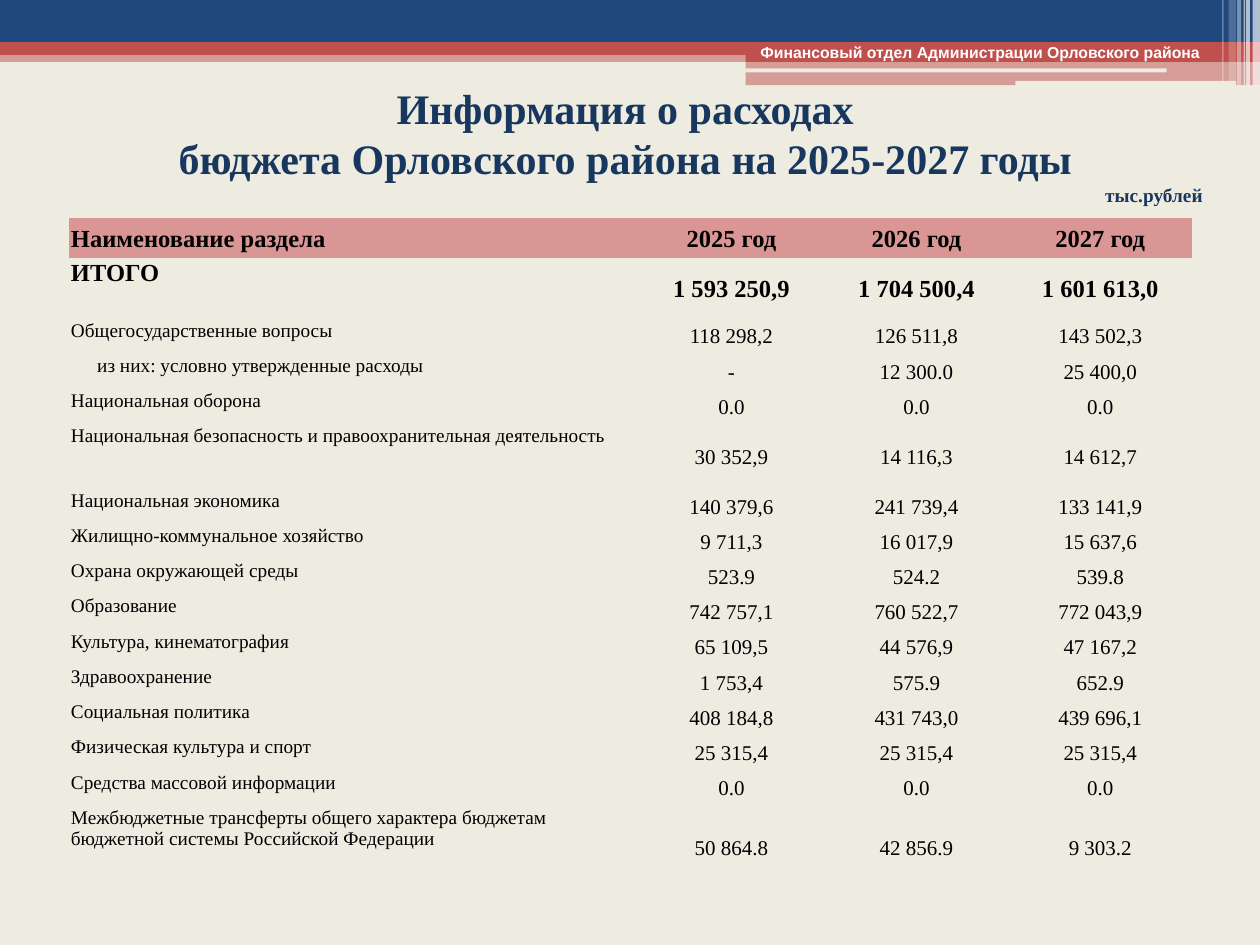
import dataclasses

import pptx
import pptx.dml.color
import pptx.enum.shapes
import pptx.enum.text
import pptx.oxml
import pptx.oxml.ns
import pptx.util

Cm = pptx.util.Cm
Pt = pptx.util.Pt
ALIGN = pptx.enum.text.PP_ALIGN
ANCHOR = pptx.enum.text.MSO_ANCHOR
SHAPE = pptx.enum.shapes.MSO_SHAPE
NO_STYLE_NO_GRID = "{2D5ABB26-0587-4C30-8999-92F81FD0307C}"


@dataclasses.dataclass(frozen=True)
class Theme:
    paper: str = "EEECE1"
    blue: str = "1F497D"
    red: str = "C0504D"
    white: str = "FFFFFF"
    navy: str = "17375E"
    black: str = "000000"
    header: str = "D99694"
    serif: str = "Times New Roman"
    sans: str = "Arial"
    title_size: float = 24
    strong_size: float = 14
    value_size: float = 12
    label_size: float = 11
    banner_size: float = 9


def rgb(color):
    return pptx.dml.color.RGBColor.from_string(color)


def apply(target, values):
    for name, value in values.items():
        setattr(target, name, value)


class SlideBuilder:
    def __init__(self, prs, theme):
        self.theme = theme
        self.s = prs.slides.add_slide(prs.slide_layouts[5])
        self.fill(self.s.background, theme.paper)

    def fill(self, target, color):
        target.fill.solid()
        target.fill.fore_color.rgb = rgb(color)

    def text(self, p, text, size, color, bold=False, font=None, **layout):
        p.text = text
        apply(p, {"space_before": Pt(0), **layout})
        r = p.runs[0]
        apply(r.font, {"name": font or self.theme.serif, "size": Pt(size), "bold": bold})
        r.font.color.rgb = rgb(color)

    def bar(self, x, y, w, h, color, opacity=100, kind=SHAPE.RECTANGLE):
        sp = self.s.shapes.add_shape(kind, Cm(x), Cm(y), Cm(w), Cm(h))
        sp.shadow.inherit = False
        sp.line.fill.background()
        self.fill(sp, color)
        if opacity < 100:
            clr = sp.fill._xPr.find(".//" + pptx.oxml.ns.qn("a:srgbClr"))
            alpha = pptx.oxml.parse_xml(
                f'<a:alpha {pptx.oxml.ns.nsdecls("a")} val="{opacity * 1000}"/>')
            clr.append(alpha)

    def banner(self, text, x, y, w, h):
        tf = self.s.shapes.add_textbox(Cm(x), Cm(y), Cm(w), Cm(h)).text_frame
        tf.word_wrap = True
        t = self.theme
        self.text(tf.paragraphs[0], text, t.banner_size, t.white, True, t.sans)

    def title(self, lines, unit, x, y, w, h):
        """Fill the title placeholder with centred lines and a right-aligned unit."""
        t = self.theme
        sp = self.s.shapes.title
        apply(sp, {"left": Cm(x), "top": Cm(y), "width": Cm(w), "height": Cm(h)})
        tf = sp.text_frame
        apply(tf, {"word_wrap": True, "vertical_anchor": ANCHOR.TOP,
                   "auto_size": pptx.enum.text.MSO_AUTO_SIZE.NONE})
        for i, line in enumerate(lines):
            p = tf.add_paragraph() if i else tf.paragraphs[0]
            self.text(p, line, t.title_size, t.navy, True,
                      alignment=ALIGN.CENTER, line_spacing=Pt(29))
        self.text(tf.add_paragraph(), unit, t.label_size, t.navy, True,
                  alignment=ALIGN.RIGHT)

    def cell(self, cell, text, row, col):
        """Rows 0 and 1 are the bold header and total; column 0 holds labels."""
        t = self.theme
        strong, label = row < 2, col == 0
        size = t.strong_size if strong else t.label_size if label else t.value_size
        indent = 0.56 if text.startswith("из них") else 0.03
        apply(cell, {
            "margin_left": Cm(indent), "margin_right": Cm(0.5 if label else 0.03),
            "margin_top": Cm(0.03), "margin_bottom": Cm(0),
            "vertical_anchor": ANCHOR.TOP if label and row else ANCHOR.MIDDLE})
        if row == 0:
            self.fill(cell, t.header)
        else:
            cell.fill.background()
        self.text(cell.text_frame.paragraphs[0], text, size, t.black, strong,
                  alignment=ALIGN.LEFT if label else ALIGN.CENTER)

    def table(self, rows, x, y, widths, heights):
        frame = self.s.shapes.add_table(len(rows), len(widths), Cm(x), Cm(y),
                                        Cm(sum(widths)), Cm(sum(heights)))
        tbl = frame.table
        apply(tbl, {"first_row": False, "horz_banding": False})
        style = tbl._tbl.tblPr.find(pptx.oxml.ns.qn("a:tableStyleId"))
        style.text = NO_STYLE_NO_GRID
        for column, width in zip(tbl.columns, widths):
            column.width = Cm(width)
        for i, (values, height) in enumerate(zip(rows, heights)):
            tbl.rows[i].height = Cm(height)
            for j, text in enumerate(values):
                self.cell(tbl.cell(i, j), text, i, j)


EXPENSES = [
    ("Наименование раздела", "2025 год", "2026 год", "2027 год"),
    ("ИТОГО", "1 593 250,9", "1 704 500,4", "1 601 613,0"),
    ("Общегосударственные вопросы", "118 298,2", "126 511,8", "143 502,3"),
    ("из них: условно утвержденные расходы", "-", "12 300.0", "25 400,0"),
    ("Национальная оборона", "0.0", "0.0", "0.0"),
    ("Национальная безопасность и правоохранительная деятельность",
     "30 352,9", "14 116,3", "14 612,7"),
    ("Национальная экономика", "140 379,6", "241 739,4", "133 141,9"),
    ("Жилищно-коммунальное хозяйство", "9 711,3", "16 017,9", "15 637,6"),
    ("Охрана окружающей среды", "523.9", "524.2", "539.8"),
    ("Образование", "742 757,1", "760 522,7", "772 043,9"),
    ("Культура, кинематография", "65 109,5", "44 576,9", "47 167,2"),
    ("Здравоохранение", "1 753,4", "575.9", "652.9"),
    ("Социальная политика", "408 184,8", "431 743,0", "439 696,1"),
    ("Физическая культура и спорт", "25 315,4", "25 315,4", "25 315,4"),
    ("Средства массовой информации", "0.0", "0.0", "0.0"),
    ("Межбюджетные трансферты общего характера бюджетам бюджетной системы "
     "Российской Федерации", "50 864.8", "42 856.9", "9 303.2"),
]
ROW_HEIGHTS = [0.8, 1.22] + [0.71] * 3 + [1.3] + [0.71] * 9 + [1.68]


def main():
    prs = pptx.Presentation()
    apply(prs, {"slide_width": Cm(25.4), "slide_height": Cm(19.05)})
    t = Theme()
    b = SlideBuilder(prs, t)

    b.bar(0, 1.02, 25.4, 0.23, t.red, 50)
    b.bar(0, 0, 25.4, 0.85, t.blue)
    b.bar(0, 0.85, 25.4, 0.26, t.red)
    b.bar(15.03, 1, 10.37, 0.25, t.red)
    b.bar(15.03, 1.25, 10.37, 0.47, t.red, 50)
    for x, y, w, h in ((15.01, 1.38, 8.51, 0.08), (20.47, 1.63, 4.45, 0.1)):
        b.bar(x, y, w, h, t.paper, kind=SHAPE.ROUNDED_RECTANGLE)
    for x, w, h, opacity in ((25.25, 0.15, 1.73, 65), (25.12, 0.08, 1.73, 65),
                             (25.07, 0.03, 1.73, 60), (24.94, 0.08, 1.73, 40),
                             (24.77, 0.15, 1.63, 20), (24.64, 0.03, 1.63, 30)):
        b.bar(x, 0, w, h, t.white, opacity)

    b.banner("Финансовый отдел Администрации Орловского района", 15.08, 0.74, 9.93, 0.64)
    b.title(["Информация о расходах", "бюджета Орловского района на 2025-2027 годы"],
            "тыс.рублей", 0.7, 1.52, 23.8, 2.77)
    b.table(EXPENSES, 1.4, 4.4, [11.48, 3.73, 3.73, 3.68], ROW_HEIGHTS)
    prs.save("out.pptx")


if __name__ == "__main__":
    main()
